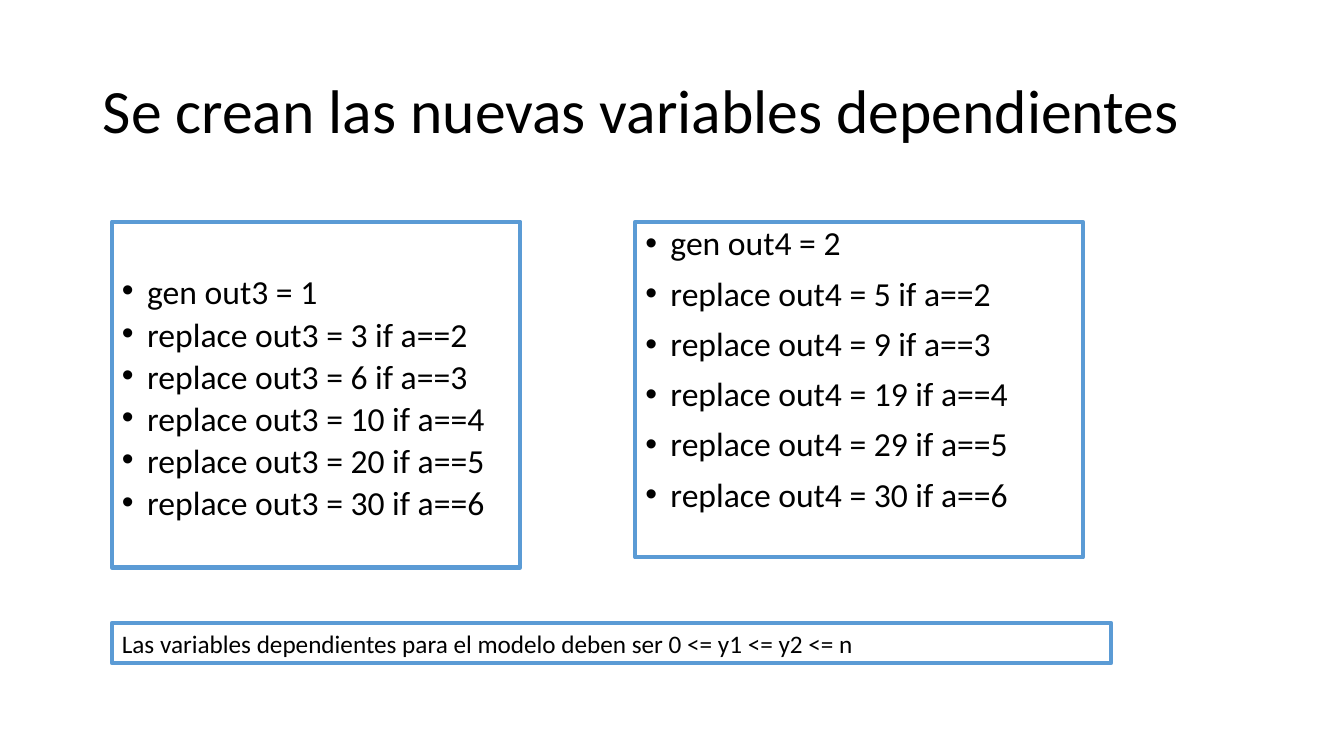
from dataclasses import dataclass

from lxml import etree
from pptx import Presentation
from pptx import util as u
from pptx.dml.color import RGBColor
from pptx.enum import text as t
from pptx.oxml import ns


@dataclass(frozen=True)
class Theme:
    font: str = "Calibri"
    ink: str = "000000"
    border: str = "5B9BD5"
    border_width: int = 3
    title_size: int = 44
    list_size: int = 24
    note_size: int = 18


THEME = Theme()
INDENT = 25


def px(length):
    return u.Emu(length * 9144)


def place(shape, box):
    shape.left, shape.top, shape.width, shape.height = map(px, box)


def add_border(shape):
    shape.line.color.rgb = RGBColor.from_string(THEME.border)
    shape.line.width = u.Pt(THEME.border_width)


def add_bullet(paragraph):
    properties = paragraph._p.get_or_add_pPr()
    properties.set("marL", str(px(INDENT)))
    properties.set("indent", str(px(-INDENT)))
    etree.SubElement(properties, ns.qn("a:buFont"), typeface="Arial")
    etree.SubElement(properties, ns.qn("a:buChar"), char="•")


def write(shape, lines, *, size, spacing=1.0, before=0, bullet=False,
          anchor=t.MSO_ANCHOR.TOP, inset_top=5):
    frame = shape.text_frame
    frame.word_wrap = True
    frame.auto_size = t.MSO_AUTO_SIZE.NONE
    frame.vertical_anchor = anchor
    frame.margin_left = frame.margin_right = px(10)
    frame.margin_top, frame.margin_bottom = px(inset_top), px(5)
    frame.text = "\n".join(lines)
    for paragraph in frame.paragraphs:
        paragraph.alignment = t.PP_ALIGN.LEFT
        paragraph.line_spacing = spacing
        paragraph.space_before = u.Pt(before)
        paragraph.space_after = u.Pt(0)
        if bullet:
            add_bullet(paragraph)
        font = paragraph.runs[0].font
        font.name, font.size = THEME.font, u.Pt(size)
        font.color.rgb = RGBColor.from_string(THEME.ink)


def fill_title(shape, box, title):
    place(shape, box)
    write(shape, [title], size=THEME.title_size, spacing=0.9,
          anchor=t.MSO_ANCHOR.MIDDLE)


def fill_commands(shape, box, variable, values, **text_format):
    place(shape, box)
    add_border(shape)
    first, *others = values
    lines = [f"gen {variable} = {first}"]
    lines += [f"replace {variable} = {value} if a=={category}"
              for category, value in enumerate(others, start=2)]
    write(shape, lines, size=THEME.list_size, before=10, bullet=True,
          **text_format)


def add_note(slide, box, note):
    shape = slide.shapes.add_textbox(*map(px, box))
    add_border(shape)
    write(shape, [note], size=THEME.note_size)


def build_slide(presentation):
    slide = presentation.slides.add_slide(presentation.slide_layouts[3])
    title, left_list, right_list = slide.placeholders
    fill_title(title, (92, 40, 1150, 145),
               "Se crean las nuevas variables dependientes")
    fill_commands(left_list, (111, 220, 405, 343), "out3",
                  (1, 3, 6, 10, 20, 30), spacing=0.7, inset_top=60)
    fill_commands(right_list, (630, 220, 444, 333), "out4",
                  (2, 5, 9, 19, 29, 30), spacing=0.9)
    add_note(slide, (111, 618, 991, 40),
             "Las variables dependientes para el modelo deben ser "
             "0 <= y1 <= y2 <= n")


def main():
    presentation = Presentation()
    presentation.slide_width, presentation.slide_height = px(1333), px(750)
    build_slide(presentation)
    presentation.save("out.pptx")


if __name__ == "__main__":
    main()
